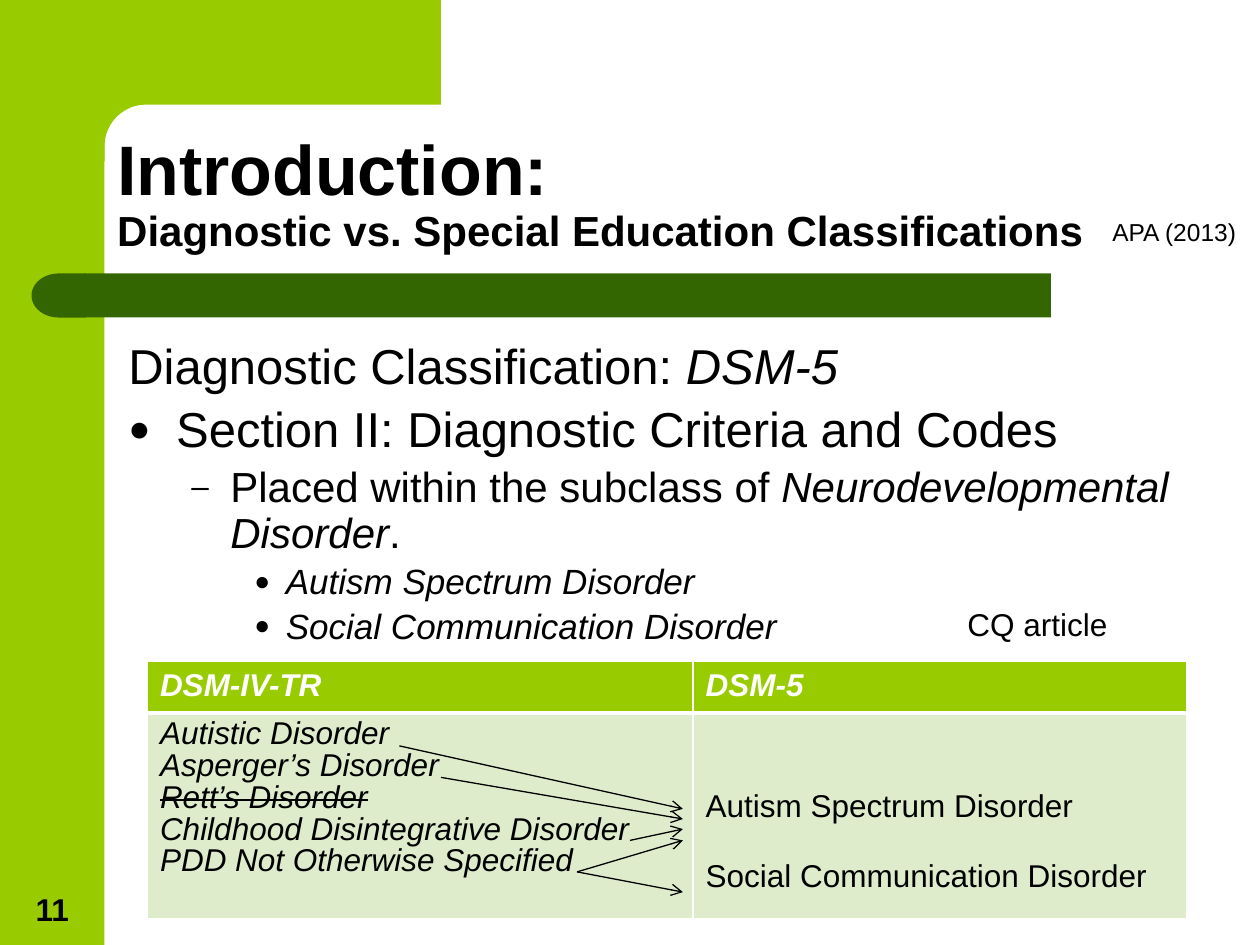
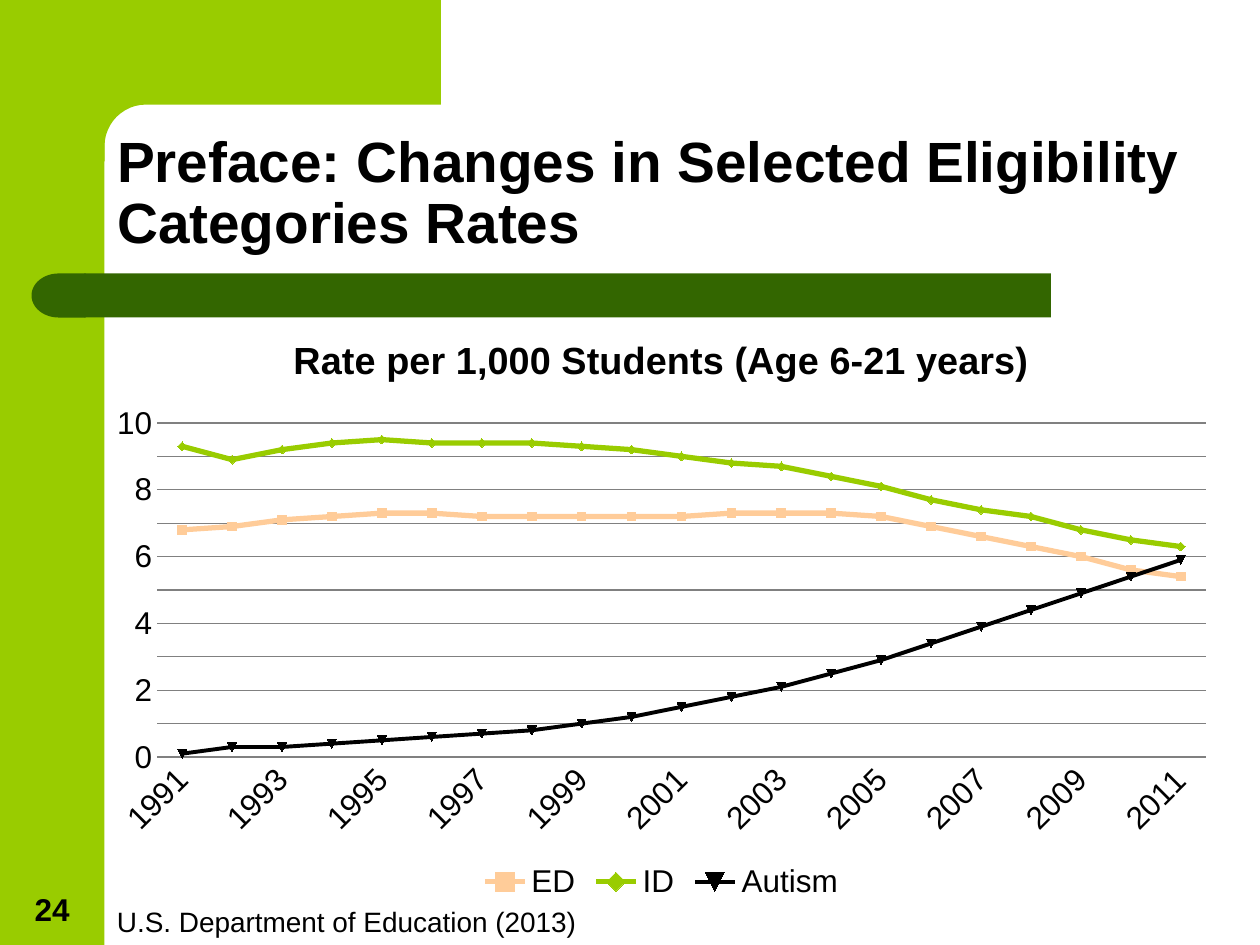
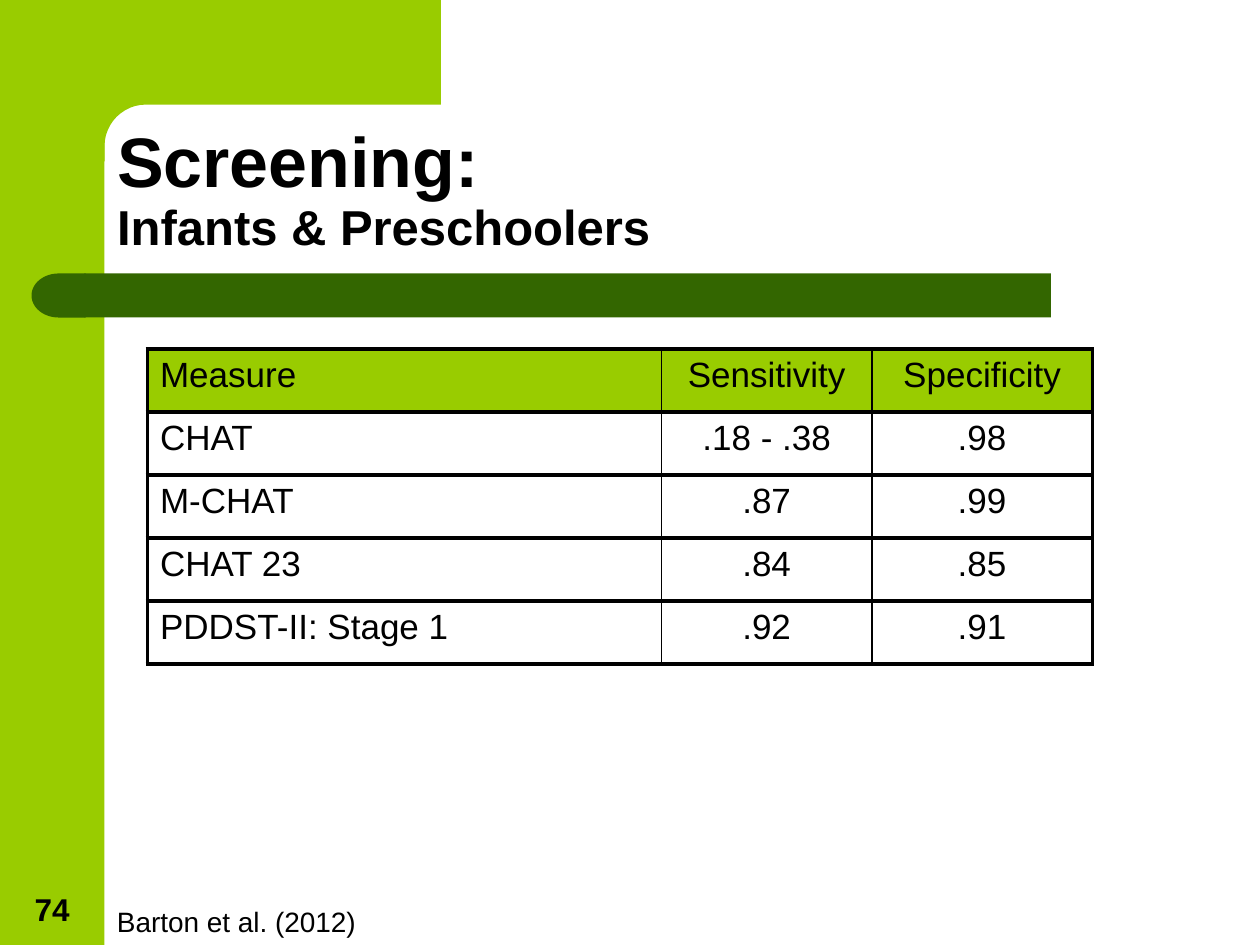
from math import cos, pi, sin

from lxml.etree import SubElement
from pptx import Presentation
from pptx.chart.data import CategoryChartData
from pptx.dml.color import RGBColor
from pptx.enum.chart import XL_CHART_TYPE, XL_LEGEND_POSITION, XL_TICK_MARK
from pptx.enum.shapes import MSO_CONNECTOR, MSO_SHAPE
from pptx.enum.text import MSO_ANCHOR, MSO_AUTO_SIZE, PP_ALIGN
from pptx.oxml.ns import qn
from pptx.util import Inches, Pt

COLORS = {
    "lime": "99CC00",
    "forest": "336600",
    "pale": "DEECCC",
    "peach": "FFCC99",
    "grid": "808080",
    "black": "000000",
    "white": "FFFFFF",
}
FONT = "Arial"
CITATION_BOX = (0.83, 7.13, 3.89, 0.37)
TITLE_BOX = (0.83, 0.83, 8.67, 1.25)

# text, level, bullet; the runs are (text, italic)
OUTLINE_LEVELS = {  # size, left margin, hanging indent, bullet
    "plain": (28, 0.38, 0.38, None),
    "section": (28, 0.38, 0.38, "●"),
    "point": (24, 0.81, 0.31, "–"),
    "disorder": (20, 1.25, 0.25, "●"),
}
OUTLINE = [
    ("plain", [("Diagnostic Classification: ", False), ("DSM-5", True)]),
    ("section", [("Section II: Diagnostic Criteria and Codes", False)]),
    ("point", [("Placed within the subclass of ", False),
               ("Neurodevelopmental Disorder", True), (".", False)]),
    ("disorder", [("Autism Spectrum Disorder", True)]),
    ("disorder", [("Social Communication Disorder", True)]),
]
OLD_DISORDERS = ["Autistic Disorder", "Asperger’s Disorder", "Rett’s Disorder",
                 "Childhood Disintegrative Disorder", "PDD Not Otherwise Specified"]
NEW_DISORDERS = ["Autism Spectrum Disorder", "Social Communication Disorder"]
REMOVED_DISORDER = "Rett’s Disorder"
# Start and end of each arrow, relative to the table's top left corner
RECLASSIFICATIONS = [
    ((2, 0.67), (4.25, 1.17)),
    ((2.33, 0.92), (4.25, 1.25)),
    ((3.83, 1.42), (4.25, 1.33)),
    ((3.41, 1.67), (4.25, 1.42)),
    ((3.41, 1.67), (4.25, 1.83)),
]

YEARS = range(1991, 2012)
RATES = [  # name, color, line width, values
    ("ED", "peach", 3, [6.8, 6.9, 7.1, 7.2, 7.3, 7.3, 7.2, 7.2, 7.2, 7.2, 7.2,
                        7.3, 7.3, 7.3, 7.2, 6.9, 6.6, 6.3, 6, 5.6, 5.4]),
    ("ID", "lime", 3, [9.3, 8.9, 9.2, 9.4, 9.5, 9.4, 9.4, 9.4, 9.3, 9.2, 9,
                       8.8, 8.7, 8.4, 8.1, 7.7, 7.4, 7.2, 6.8, 6.5, 6.3]),
    ("Autism", "black", 2.25, [0.1, 0.3, 0.3, 0.4, 0.5, 0.6, 0.7, 0.8, 1, 1.2, 1.5,
                               1.8, 2.1, 2.5, 2.9, 3.4, 3.9, 4.4, 4.9, 5.4, 5.9]),
]
SCREENING_ROWS = [
    ("Measure", "Sensitivity", "Specificity"),
    ("CHAT", ".18 - .38", ".98"),
    ("M-CHAT", ".87", ".99"),
    ("CHAT 23", ".84", ".85"),
    ("PDDST-II: Stage 1", ".92", ".91"),
]


def color(name):
    return RGBColor.from_string(COLORS[name])


def set_font(font, size, color_name="black", **values):
    for name, value in {"name": FONT, "size": Pt(size), **values}.items():
        setattr(font, name, value)
    font.color.rgb = color(color_name)


def add_run(paragraph, text, size, color_name="black", **values):
    run = paragraph.add_run()
    run.text = text
    set_font(run.font, size, color_name, **values)
    return run


def paint(shape, color_name):
    shape.shadow.inherit = False
    shape.fill.solid()
    shape.fill.fore_color.rgb = color(color_name)
    shape.line.fill.background()


def add_text(slide, box, text, size, **values):
    shape = slide.shapes.add_textbox(*map(Inches, box))
    shape.text_frame.word_wrap = False
    add_run(shape.text_frame.paragraphs[0], text, size, **values)
    return shape


def add_corner(slide, left, right, inner_left, inner_top, radius, bottom):
    """Top band whose inner corner against the side band is rounded."""
    center = inner_left + radius, inner_top + radius
    steps = 12
    arc = [(center[0] - radius * sin(pi / 2 * step / steps),
            center[1] - radius * cos(pi / 2 * step / steps)) for step in range(steps + 1)]
    outline = [(right, 0), (right, inner_top), *arc,
               (inner_left, bottom), (left, bottom)]
    builder = slide.shapes.build_freeform(Inches(left), 0)
    builder.add_line_segments([(Inches(x), Inches(y)) for x, y in outline])
    paint(builder.convert_to_shape(), "lime")


def add_frame(slide):
    bands = [
        (MSO_SHAPE.RECTANGLE, (0, 0, 0.83, 7.5), "lime", 0),
        (MSO_SHAPE.RECTANGLE, (0.67, 2.17, 7.67, 0.35), "forest", 0),
        (MSO_SHAPE.FLOWCHART_DELAY, (0.25, 2.17, 0.43, 0.35), "forest", 180),
    ]
    for kind, box, color_name, rotation in bands:
        band = slide.shapes.add_shape(kind, *map(Inches, box))
        band.rotation = rotation
        paint(band, color_name)
    add_corner(slide, 0.5, 3.5, 0.83, 0.83, 0.33, 1.28)


def set_title(slide, box, lines):
    """Fill the title with (text, size) lines held in one paragraph."""
    title = slide.shapes.title
    for name, value in zip(("left", "top", "width", "height"), box):
        setattr(title, name, Inches(value))
    frame = title.text_frame
    frame.auto_size = MSO_AUTO_SIZE.NONE
    frame.vertical_anchor = MSO_ANCHOR.BOTTOM
    paragraph = frame.paragraphs[0]
    paragraph.alignment = PP_ALIGN.LEFT
    paragraph.line_spacing = 0.9
    for index, (text, size) in enumerate(lines):
        if index:
            line_break = paragraph._p.add_br()
            SubElement(line_break, qn("a:rPr"), sz=str(int(size * 100)))
        add_run(paragraph, text, size, bold=True)


def start_slide(presentation, number, title_lines, title_box=TITLE_BOX):
    slide = presentation.slides.add_slide(presentation.slide_layouts[5])
    add_frame(slide)
    set_title(slide, title_box, title_lines)
    label = add_text(slide, (0, 6.88, 0.83, 0.53), number, 18, bold=True)
    label.text_frame.word_wrap = True
    label.text_frame.vertical_anchor = MSO_ANCHOR.BOTTOM
    label.text_frame.paragraphs[0].alignment = PP_ALIGN.CENTER
    return slide


def set_bullet(paragraph, margin, hanging, character):
    properties = paragraph._p.get_or_add_pPr()
    properties.set("marL", str(Inches(margin)))
    properties.set("indent", str(-Inches(hanging)))
    if character is None:
        SubElement(properties, qn("a:buNone"))
        return
    bullet_color = SubElement(properties, qn("a:buClr"))
    SubElement(bullet_color, qn("a:srgbClr"), val=COLORS["black"])
    SubElement(properties, qn("a:buSzPct"), val="75000")
    SubElement(properties, qn("a:buFont"), typeface=FONT)
    SubElement(properties, qn("a:buChar"), char=character)


def add_outline(slide, box):
    frame = slide.shapes.add_textbox(*map(Inches, box)).text_frame
    frame.word_wrap = True
    for index, (level, runs) in enumerate(OUTLINE):
        paragraph = frame.add_paragraph() if index else frame.paragraphs[0]
        size, margin, hanging, character = OUTLINE_LEVELS[level]
        paragraph.line_spacing = 0.9
        paragraph.space_before = Pt(size * 0.2)
        set_bullet(paragraph, margin, hanging, character)
        for text, italic in runs:
            add_run(paragraph, text, size, italic=italic)


def add_plain_table(slide, left, top, columns, rows):
    """Table without banding, sized by its column widths and row heights."""
    table = slide.shapes.add_table(
        len(rows), len(columns), Inches(left), Inches(top),
        Inches(sum(columns)), Inches(sum(rows))).table
    table.first_row = table.horz_banding = False
    for column, width in zip(table.columns, columns):
        column.width = Inches(width)
    for row, height in zip(table.rows, rows):
        row.height = Inches(height)
    return table


def format_cell(cell, fill, border, widths):
    """Fill a cell and draw its left, right, top and bottom borders."""
    properties = cell._tc.get_or_add_tcPr()
    for side, width in zip("LRTB", widths):
        line = SubElement(properties, qn(f"a:ln{side}"), w=str(Pt(width)))
        SubElement(SubElement(line, qn("a:solidFill")), qn("a:srgbClr"), val=COLORS[border])
    cell.fill.solid()
    cell.fill.fore_color.rgb = color(fill)


def add_arrow(slide, start, end):
    arrow = slide.shapes.add_connector(MSO_CONNECTOR.STRAIGHT, *map(Inches, (*start, *end)))
    arrow.line.color.rgb = color("black")
    arrow.line.width = Pt(0.75)
    SubElement(arrow.line._get_or_add_ln(), qn("a:tailEnd"), type="arrow")
    SubElement(arrow._element.spPr, qn("a:effectLst"))


def add_reclassification(slide, left, top):
    table = add_plain_table(slide, left, top, (4.33, 3.92), (0.41, 1.63))
    for column, heading in enumerate(("DSM-IV-TR", "DSM-5")):
        header, body = table.cell(0, column), table.cell(1, column)
        format_cell(header, "lime", "white", (1, 1, 1, 3))
        format_cell(body, "pale", "white", (1, 1, 3, 1))
        add_run(header.text_frame.paragraphs[0], heading, 18, "white", bold=True, italic=True)

    old_frame = table.cell(1, 0).text_frame
    for index, disorder in enumerate(OLD_DISORDERS):
        paragraph = old_frame.add_paragraph() if index else old_frame.paragraphs[0]
        paragraph.line_spacing = 0.9
        run = add_run(paragraph, disorder, 18, italic=True)
        if disorder == REMOVED_DISORDER:
            run._r.get_or_add_rPr().set("strike", "sngStrike")

    new_cell = table.cell(1, 1)
    new_cell.margin_top = Inches(0.6)
    new_frame = new_cell.text_frame
    for index, disorder in enumerate(NEW_DISORDERS):
        paragraph = new_frame.add_paragraph() if index else new_frame.paragraphs[0]
        paragraph.space_before = Pt(20 * index)
        add_run(paragraph, disorder, 18)

    for ends in RECLASSIFICATIONS:
        add_arrow(slide, *[(left + x, top + y) for x, y in ends])


def add_rate_chart(slide, box):
    data = CategoryChartData()
    data.categories = [str(year) for year in YEARS]
    for name, _, _, values in RATES:
        data.add_series(name, values)
    chart = slide.shapes.add_chart(XL_CHART_TYPE.LINE_MARKERS, *map(Inches, box), data).chart
    set_font(chart.font, 18)

    chart.has_title = True
    add_run(chart.chart_title.text_frame.paragraphs[0],
            "Rate per 1,000 Students (Age 6-21 years)", 21.6, bold=True)
    chart.has_legend = True
    chart.legend.position = XL_LEGEND_POSITION.BOTTOM
    chart.legend.include_in_layout = False
    set_font(chart.legend.font, 18)

    for axis in (chart.category_axis, chart.value_axis):
        axis.major_tick_mark = axis.minor_tick_mark = XL_TICK_MARK.NONE
        set_font(axis.tick_labels.font, 18)
    chart.category_axis.format.line.color.rgb = color("grid")
    chart.category_axis._element.txPr.find(qn("a:bodyPr")).set("rot", "-2700000")
    value_axis = chart.value_axis
    for name, value in {"minimum_scale": 0, "maximum_scale": 10, "major_unit": 1}.items():
        setattr(value_axis, name, value)
    value_axis.tick_labels.number_format = "General"
    value_axis.tick_labels.number_format_is_linked = False
    value_axis.format.line.fill.background()
    value_axis.major_gridlines.format.line.color.rgb = color("grid")

    chart.plots[0].vary_by_categories = False
    for series, (_, color_name, width, _) in zip(chart.plots[0].series, RATES):
        series.smooth = False
        series.format.line.color.rgb = color(color_name)
        series.format.line.width = Pt(width)
        series.marker.size = 5
        series.marker.format.fill.solid()
        series.marker.format.fill.fore_color.rgb = color(color_name)
        series.marker.format.line.color.rgb = color(color_name)


def add_screening_table(slide, left, top):
    columns = (4.08, 1.67, 1.75)
    thick, thin = 2.25, 1
    table = add_plain_table(slide, left, top, columns, [0.5] * len(SCREENING_ROWS))
    for row, texts in enumerate(SCREENING_ROWS):
        for column, text in enumerate(texts):
            cell = table.cell(row, column)
            left_width = thin if column else thick
            right_width = thin if column < len(columns) - 1 else thick
            format_cell(cell, "white" if row else "lime", "black",
                        (left_width, right_width, thick, thick))
            paragraph = cell.text_frame.paragraphs[0]
            paragraph.alignment = PP_ALIGN.CENTER if column else PP_ALIGN.LEFT
            add_run(paragraph, text, 20)


def build_classification_slide(presentation):
    slide = start_slide(
        presentation, "11",
        [("Introduction:", 40), ("Diagnostic vs. Special Education Classifications", 24)],
        (0.83, 0.83, 9.08, 1.25))
    add_outline(slide, (0.92, 2.67, 9.08, 4.83))
    add_reclassification(slide, 1.17, 5.25)
    add_text(slide, (8.73, 1.67, 1.19, 0.34), "APA (2013)", 14)
    add_text(slide, (7.58, 4.75, 1.32, 0.4), "CQ article", 18)


def build_rates_slide(presentation):
    slide = start_slide(presentation, "24", [
        ("Preface: Changes in Selected Eligibility Categories Rates", 32.4)])
    add_rate_chart(slide, (0.75, 2.46, 9, 4.73))
    add_text(slide, CITATION_BOX, "U.S. Department of Education (2013)", 16)


def build_screening_slide(presentation):
    slide = start_slide(presentation, "74", [
        ("Screening:", 40), ("Infants & Preschoolers", 28)])
    add_screening_table(slide, 1.17, 2.77)
    left, top, _, height = CITATION_BOX
    add_text(slide, (left, top, 2.12, height), "Barton et al. (2012)", 16)


def main():
    presentation = Presentation()
    presentation.slide_width = Inches(10)
    presentation.slide_height = Inches(7.5)
    build_classification_slide(presentation)
    build_rates_slide(presentation)
    build_screening_slide(presentation)
    presentation.save("out.pptx")


if __name__ == "__main__":
    main()
